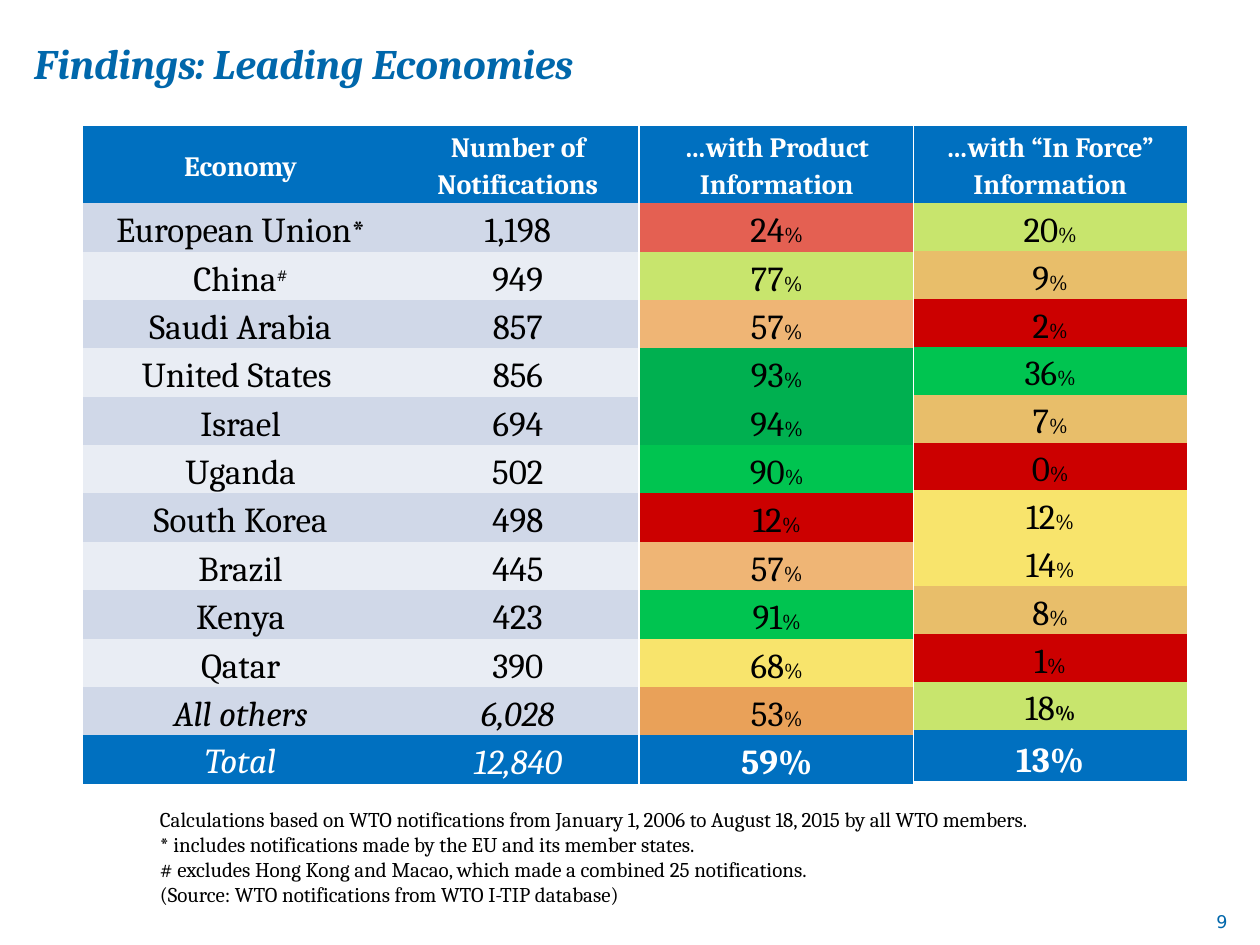
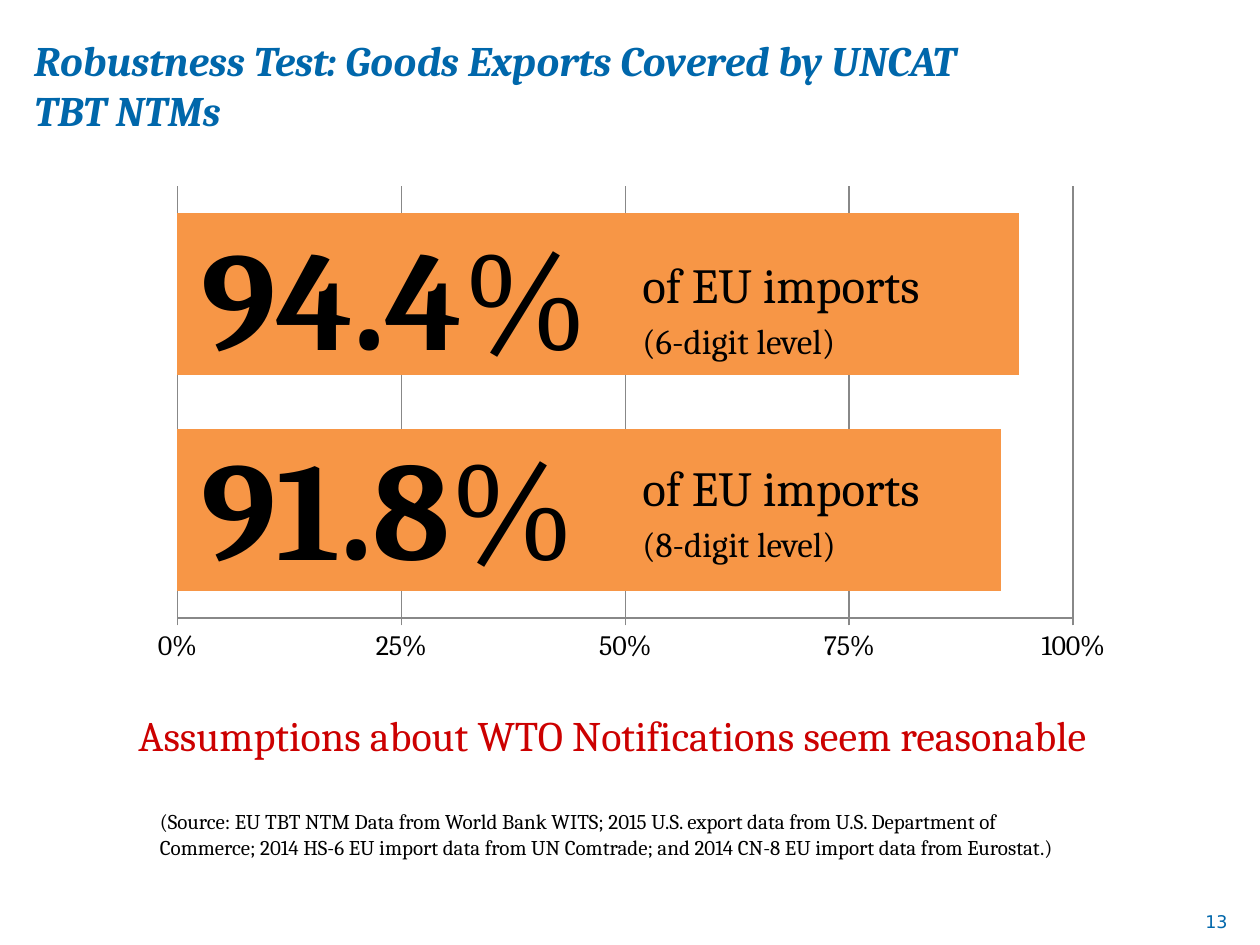
from pptx import Presentation
from pptx.chart.data import CategoryChartData
from pptx.dml.color import RGBColor
from pptx.enum import chart as charts, text
from pptx.oxml import parse_xml
from pptx.oxml.ns import nsdecls
from pptx.util import Inches, Pt

SERIF, SANS = "Cambria", "DejaVu Sans"
COLORS = {
    "title": "0067AB", "header": "0070C0", "white": "FFFFFF", "black": "000000",
    "band_dark": "D0D8E8", "band_light": "E9EDF4", "grid": "888888", "bar": "F79646",
    "red": "CC0000", "coral": "E46052", "amber": "E9A159", "peach": "EFB575",
    "sand": "E8BE6A", "yellow": "F8E46C", "lime": "C8E56D", "green": "00C450",
    "deep_green": "00B050",
}
NO_GRID_STYLE = "{2D5ABB26-0587-4C30-8999-92F81FD0307C}"
TABLE_TOP, HEADER_HEIGHT, ROW_HEIGHT = 1, 0.61, 0.38

# economy, mark, notifications, product %, its colour, in force %, its colour
ECONOMIES = [
    ("European Union", "*", "1,198", 24, "coral", 20, "lime"),
    ("China", "#", "949", 77, "lime", 9, "sand"),
    ("Saudi Arabia", "", "857", 57, "peach", 2, "red"),
    ("United States ", "", "856", 93, "deep_green", 36, "green"),
    ("Israel", "", "694", 94, "deep_green", 7, "sand"),
    ("Uganda", "", "502", 90, "green", 0, "red"),
    ("South Korea", "", "498", 12, "red", 12, "yellow"),
    ("Brazil", "", "445", 57, "peach", 14, "yellow"),
    ("Kenya", "", "423", 91, "green", 8, "sand"),
    ("Qatar", "", "390", 68, "yellow", 1, "red"),
    ("All others", "", "6,028", 53, "amber", 18, "lime"),
]
NOTES = [
    "Calculations based on WTO notifications from January 1, 2006 to August 18, 2015 "
    "by all WTO members.",
    "* includes notifications made by the EU and its member states.",
    "# excludes Hong Kong and Macao, which made a combined 25 notifications.",
    "(Source: WTO notifications from WTO I-TIP database)",
]
SOURCE = ("(Source: EU TBT NTM Data from World Bank WITS; 2015 U.S. export data from U.S. "
          "Department of Commerce; 2014 HS-6 EU import data from UN Comtrade; and 2014 CN-8 "
          "EU import data from Eurostat.)")


def rgb(name):
    return RGBColor.from_string(COLORS[name])


def style_font(font, size, color="black", name=SERIF, bold=False, italic=False):
    font.size, font.name, font.bold, font.italic = Pt(size), name, bold, italic
    font.color.rgb = rgb(color)


def add_run(p, words, size=None, bold=None):
    r = p.add_run()
    r.text = words
    if size:
        r.font.size = Pt(size)
    if bold is not None:
        r.font.bold = bold
    return r


# Text
def add_text(slide, box, paragraphs, size, line_spacing=None, space_after=None,
             align=None, **style):
    """Each paragraph is a list of (words, size, bold); "\\n" makes a line break."""
    tf = slide.shapes.add_textbox(*map(Inches, box)).text_frame
    tf.word_wrap = True
    for i, runs in enumerate(paragraphs):
        p = tf.paragraphs[0] if i == 0 else tf.add_paragraph()
        p.alignment, p.line_spacing = align, line_spacing
        if space_after:
            p.space_after = Pt(space_after)
        style_font(p.font, size, **style)
        for run in runs:
            if run == "\n":
                p.add_line_break()
            else:
                add_run(p, *run)


def add_slide(prs, title, top, number):
    slide = prs.slides.add_slide(prs.slide_layouts[5])
    sp = slide.shapes.title
    sp.left, sp.top, sp.width, sp.height = map(Inches, (0.17, top, 7.92, 1))
    tf = sp.text_frame
    tf.text = title
    tf.auto_size = text.MSO_AUTO_SIZE.NONE
    tf.vertical_anchor = text.MSO_ANCHOR.MIDDLE
    p = tf.paragraphs[0]
    p.alignment = text.PP_ALIGN.LEFT
    style_font(p.font, 24, "title", bold=True, italic=True)
    add_text(slide, (8.67, 7.18, 1.17, 0.5), [[(number,)]], 10,
             align=text.PP_ALIGN.RIGHT, color="title", name=SANS)
    return slide


# Tables
def add_table(slide, left, widths, row_count, total_height=ROW_HEIGHT):
    heights = [HEADER_HEIGHT] + [ROW_HEIGHT] * (row_count - 2) + [total_height]
    frame = slide.shapes.add_table(row_count, len(widths), Inches(left), Inches(TABLE_TOP),
                                   Inches(sum(widths)), Inches(sum(heights)))
    table = frame.table
    table.first_row = table.horz_banding = False
    table._tbl.tblPr[0].text = NO_GRID_STYLE
    for column, width in zip(table.columns, widths):
        column.width = Inches(width)
    for row, height in zip(table.rows, heights):
        row.height = Inches(height)
    return table


def fill_cell(cell, words, fill, size=20, spacing=1.15, middle=False, **style):
    cell.fill.solid()
    cell.fill.fore_color.rgb = rgb(fill)
    cell.margin_left = cell.margin_right = Inches(0.07)
    cell.margin_top = cell.margin_bottom = 0
    cell.vertical_anchor = text.MSO_ANCHOR.MIDDLE if middle else text.MSO_ANCHOR.BOTTOM
    p = cell.text_frame.paragraphs[0]
    p.alignment, p.line_spacing = text.PP_ALIGN.CENTER, spacing
    style_font(p.font, size, **style)
    add_run(p, words)
    return p


def fill_header(cell, words):
    fill_cell(cell, words, "header", 16, middle=True, color="white", bold=True)


def add_economy_table(slide):
    table = add_table(slide, 0.66, [2.5, 1.9], len(ECONOMIES) + 2)
    fill_header(table.cell(0, 0), "Economy")
    fill_header(table.cell(0, 1), "Number of Notifications")
    for i, (economy, mark, count, *_) in enumerate(ECONOMIES, 1):
        band = "band_dark" if i % 2 else "band_light"
        italic = economy == "All others"
        p = fill_cell(table.cell(i, 0), economy, band, italic=italic)
        if mark:
            r = add_run(p, mark, 18)
            if mark == "#":
                r.font._element.set("baseline", "30000")
        fill_cell(table.cell(i, 1), count, band, italic=italic)
    total = len(ECONOMIES) + 1
    fill_cell(table.cell(total, 0), "Total", "header", middle=True, color="white", italic=True)
    fill_cell(table.cell(total, 1), "12,840", "header", color="white", italic=True)


def add_share_table(slide, left, header, shares, total, spacing, total_height=ROW_HEIGHT):
    table = add_table(slide, left, [2.17], len(shares) + 2, total_height)
    fill_header(table.cell(0, 0), header)
    for i, (share, fill) in enumerate(shares, 1):
        p = fill_cell(table.cell(i, 0), str(share), fill, spacing=spacing)
        add_run(p, "%", 12)
    fill_cell(table.cell(len(shares) + 1, 0), total, "header", color="white", bold=True)
    return table


# Chart
def add_coverage_chart(slide):
    data = CategoryChartData(number_format="0%")
    data.categories = ["8-digit level", "6-digit level"]
    data.add_series("Series 1", (0.92, 0.94))
    chart = slide.shapes.add_chart(charts.XL_CHART_TYPE.BAR_CLUSTERED, Inches(1.17),
                                   Inches(1.31), Inches(7.9), Inches(4.23), data).chart
    chart.has_legend = chart.has_title = False
    style_font(chart.font, 10)

    plot = chart.plots[0]
    plot.gap_width, plot.overlap, plot.vary_by_categories = 33, -23, False
    bars = plot.series[0].format.fill
    bars.solid()
    bars.fore_color.rgb = rgb("bar")

    chart.category_axis.visible = False
    axis = chart.value_axis
    axis.minimum_scale, axis.maximum_scale, axis.major_unit = 0, 1, 0.25
    axis.major_tick_mark = charts.XL_TICK_MARK.OUTSIDE
    axis.has_major_gridlines = True
    for line in (axis.format.line, axis.major_gridlines.format.line):
        line.width = Pt(0.75)
        line.color.rgb = rgb("grid")
    axis.tick_labels.number_format = "0%"
    axis.tick_labels.number_format_is_linked = False
    style_font(axis.tick_labels.font, 16)

    # Fixed inner plot area
    place = {"x": 0.03, "y": 0.04, "w": 0.9, "h": 0.81}
    tags = "".join(f'<c:{key}Mode val="edge"/>' for key in "xy")
    tags += "".join(f'<c:{key} val="{value}"/>' for key, value in place.items())
    area = chart._chartSpace.chart.plotArea
    for layout in area.findall("{*}layout"):
        area.remove(layout)
    area.insert(0, parse_xml(f'<c:layout {nsdecls("c")}><c:manualLayout>'
                             f'<c:layoutTarget val="inner"/>{tags}'
                             '</c:manualLayout></c:layout>'))


def build_economies(prs):
    slide = add_slide(prs, "Findings: Leading Economies", 0, "9")
    add_text(slide, (1.17, 6.35, 7.42, 1.1), [[(note,)] for note in NOTES], 12)
    add_economy_table(slide)
    in_force = add_share_table(slide, 7.25, "…with “In Force” Information",
                               [row[5:7] for row in ECONOMIES], "13%", 1, 0.41)
    others_percent = in_force.cell(len(ECONOMIES), 0).text_frame.paragraphs[0].runs[-1]
    others_percent.font.bold = True
    add_share_table(slide, 5.08, "…with Product Information",
                    [row[3:5] for row in ECONOMIES], "59%", 1.15)


def build_robustness(prs):
    slide = add_slide(prs, "Robustness Test: Goods Exports Covered by UNCAT TBT NTMs", 0.17, "13")
    add_text(slide, (1.17, 6.37, 7.42, 0.71), [[(SOURCE,)]], 12)
    add_coverage_chart(slide)
    spaced = {"line_spacing": 1.15, "space_after": 10}
    add_text(slide, (1.5, 1.42, 5.75, 3.34),
             [[(share, None, True), ("%",)] for share in ("94.4", "91.8")], 80, **spaced)
    for top, level in ((1.9, "(6-digit level)"), (3.51, "(8-digit level)")):
        add_text(slide, (5, top, 3, 1.12),
                 [[("of EU imports",), "\n", (level, 20)]], 28, **spaced)
    add_text(slide, (1, 5.58, 8.43, 0.5),
             [[("Assumptions about WTO Notifications seem reasonable",)]], 24, color="red")


def main():
    prs = Presentation()
    prs.slide_width, prs.slide_height = Inches(10), Inches(7.5)
    build_economies(prs)
    build_robustness(prs)
    prs.save("out.pptx")


if __name__ == "__main__":
    main()
